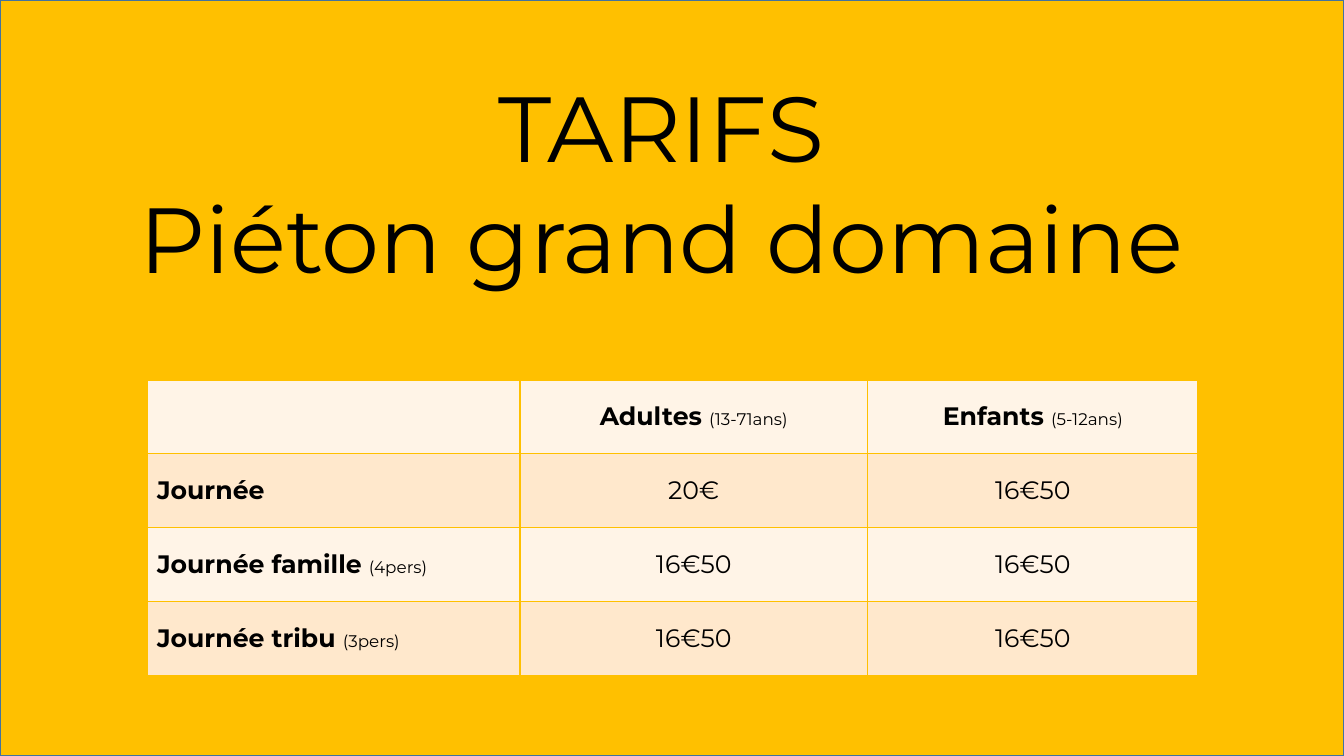
"""Build the price slide for pedestrian passes."""
import lxml.etree
import pptx
import pptx.dml.color
import pptx.enum.shapes
import pptx.enum.text
import pptx.oxml
import pptx.oxml.ns
import pptx.util

Pt = pptx.util.Pt
RGBColor = pptx.dml.color.RGBColor
ALIGN = pptx.enum.text.PP_ALIGN

YELLOW = RGBColor(0xFF, 0xC0, 0x00)
BLUE = RGBColor(0x43, 0x73, 0x9E)
CREAM = RGBColor(0xFF, 0xF4, 0xE7)
PEACH = RGBColor(0xFF, 0xE8, 0xCC)
BLACK = RGBColor(0x00, 0x00, 0x00)

WIDTH, HEIGHT = Pt(960), Pt(540)
TITLE = ["TARIFS", "Piéton grand domaine"]
COLUMN_WIDTHS = [Pt(266.4), Pt(248.4), Pt(236)]
ROW_HEIGHT = Pt(52.7)
PRICES = [
    [("", ""), ("Adultes ", "(13-71ans)"), ("Enfants ", "(5-12ans)")],
    [("Journée", ""), "20€", "16€50"],
    [("Journée famille ", "(4pers)"), "16€50", "16€50"],
    [("Journée tribu ", "(3pers)"), "16€50", "16€50"],
]


def write(paragraph, text, size=18, bold=False, align=ALIGN.CENTER):
    """Add a formatted run to a paragraph."""
    paragraph.alignment = align
    run = paragraph.add_run()
    run.text = text
    run.font.name = "Montserrat"
    run.font.size = Pt(size)
    run.font.bold = bold
    run.font.color.rgb = BLACK


def add_background(slide):
    """Cover the slide with an outlined yellow rectangle."""
    background = slide.shapes.add_shape(
        pptx.enum.shapes.MSO_SHAPE.RECTANGLE, 0, 0, WIDTH, HEIGHT)
    background.shadow.inherit = False
    background.fill.solid()
    background.fill.fore_color.rgb = YELLOW
    background.line.color.rgb = BLUE
    background.line.width = Pt(1)


def add_title(slide):
    """Add the centred title lines."""
    title = slide.shapes.add_textbox(Pt(34.5), Pt(46.8), Pt(875.5), Pt(167)).text_frame
    title.word_wrap = True
    for index, line in enumerate(TITLE):
        paragraph = title.add_paragraph() if index else title.paragraphs[0]
        write(paragraph, line, size=66)


def add_borders(cell):
    """Draw a yellow line on each side of a cell."""
    properties = cell._tc.get_or_add_tcPr()
    for side in ("lnL", "lnR", "lnT", "lnB"):
        border = lxml.etree.SubElement(
            properties, pptx.oxml.ns.qn(f"a:{side}"), w=str(Pt(1)))
        fill = lxml.etree.SubElement(border, pptx.oxml.ns.qn("a:solidFill"))
        lxml.etree.SubElement(fill, pptx.oxml.ns.qn("a:srgbClr"), val=str(YELLOW))


def fill_cell(cell, content, color, align):
    """Format a cell and write its price, or its label and detail."""
    add_borders(cell)
    cell.fill.solid()
    cell.fill.fore_color.rgb = color
    cell.vertical_anchor = pptx.enum.text.MSO_ANCHOR.MIDDLE
    paragraph = cell.text_frame.paragraphs[0]
    if isinstance(content, str):
        write(paragraph, content, align=align)
        return
    label, detail = content
    if label:
        write(paragraph, label, bold=True, align=align)
    if detail:
        write(paragraph, detail, size=12, align=align)


def add_prices(slide):
    """Add the table of prices with alternating row colours."""
    prices = slide.shapes.add_table(
        len(PRICES), len(COLUMN_WIDTHS), Pt(105), Pt(271.5),
        sum(COLUMN_WIDTHS), ROW_HEIGHT * len(PRICES)).table
    for column, width in zip(prices.columns, COLUMN_WIDTHS):
        column.width = width
    for row_index, row in enumerate(PRICES):
        prices.rows[row_index].height = ROW_HEIGHT
        color = PEACH if row_index % 2 else CREAM
        for column_index, content in enumerate(row):
            align = ALIGN.CENTER if column_index else ALIGN.LEFT
            fill_cell(prices.cell(row_index, column_index), content, color, align)


def main():
    """Build and save the slide."""
    presentation = pptx.Presentation()
    presentation.slide_width, presentation.slide_height = WIDTH, HEIGHT
    slide = presentation.slides.add_slide(presentation.slide_layouts[6])
    add_background(slide)
    add_prices(slide)
    add_title(slide)
    presentation.save("out.pptx")


if __name__ == "__main__":
    main()
